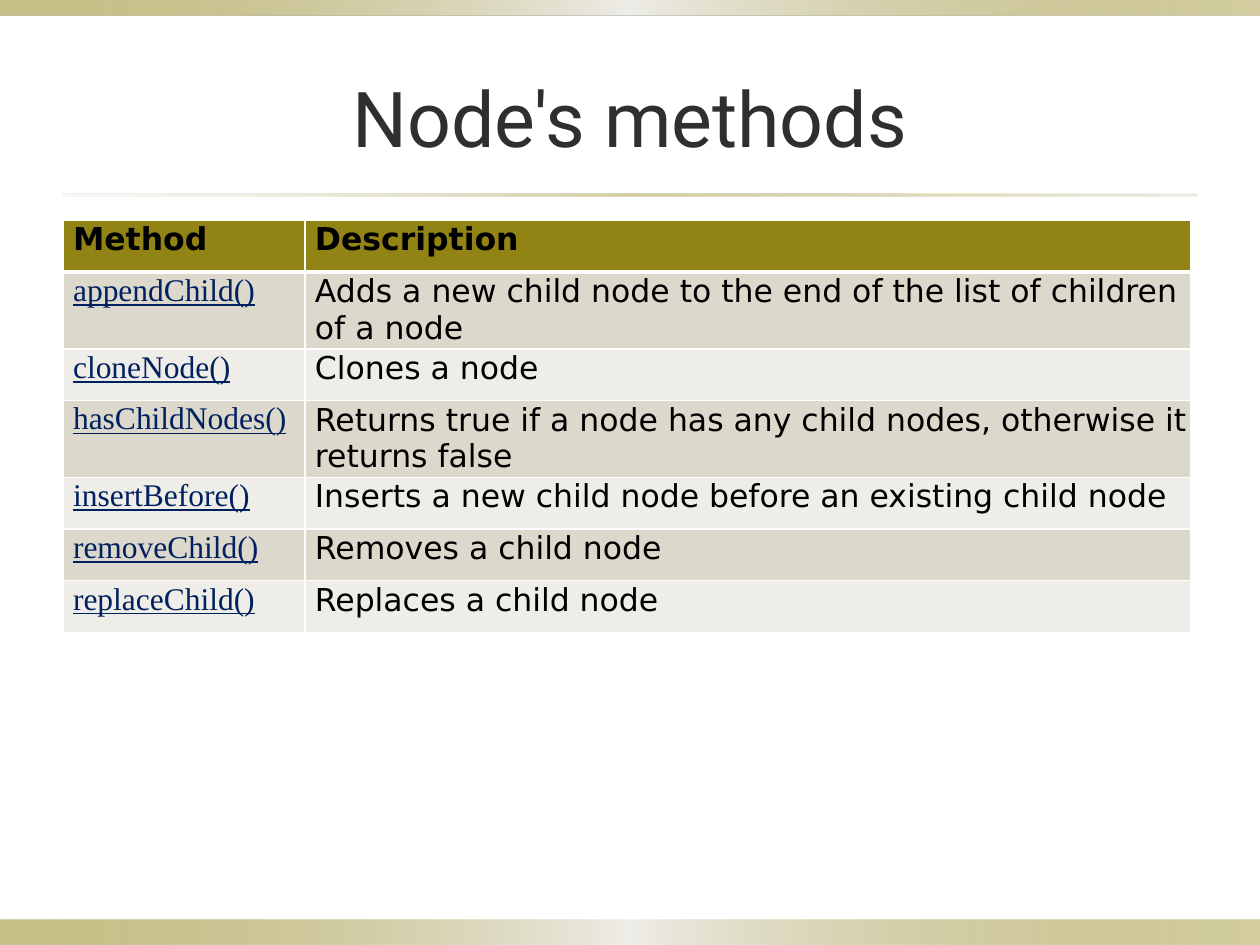
from lxml import etree
from pptx import Presentation
from pptx import util as u
from pptx.dml.color import RGBColor
from pptx.enum import shapes, text
from pptx.oxml.ns import qn

COLORS = {"olive": "918415", "band": "DCD9CC", "pale": "EEEDE8", "title": "2F2F2F",
          "link": "002060", "black": "000000", "white": "FFFFFF"}
FORMATS = {
    "title": ({"name": "Roboto", "size": u.Pt(44)}, "title"),
    "header": ({"name": "DejaVu Sans", "size": u.Pt(18), "bold": True}, "black"),
    "method": ({"name": "Times New Roman", "size": u.Pt(18), "bold": False,
                "underline": True}, "link"),
    "description": ({"name": "DejaVu Sans", "size": u.Pt(18), "bold": False}, "black"),
}
BAR = [(0, "olive", 50), (50, "pale", 100), (100, "olive", 40)]
RULE = [(0, "band", 20), (50, "olive", 40), (100, "band", 50)]
ROWS = [
    ("Method", "Description"),
    ("appendChild()", "Adds a new child node to the end of the list of children of a node"),
    ("cloneNode()", "Clones a node"),
    ("hasChildNodes()", "Returns true if a node has any child nodes, otherwise it returns false"),
    ("insertBefore()", "Inserts a new child node before an existing child node"),
    ("removeChild()", "Removes a child node"),
    ("replaceChild()", "Replaces a child node"),
]


def write(tf, words, kind):
    r = tf.paragraphs[0].add_run()
    r.text = words
    values, color = FORMATS[kind]
    for name, value in values.items():
        setattr(r.font, name, value)
    r.font.color.rgb = RGBColor.from_string(COLORS[color])


def add_color(parent, color, alpha=100):
    clr = etree.SubElement(parent, qn("a:srgbClr"), val=COLORS[color])
    if alpha < 100:
        etree.SubElement(clr, qn("a:alpha"), val=str(alpha * 1000))


prs = Presentation()
prs.slide_width, prs.slide_height = u.Inches(10), u.Inches(7.5)
s = prs.slides.add_slide(prs.slide_layouts[5])

for box, stops in [((0, 7.3, 10, 0.2), BAR), ((0, 0, 10, 0.12), BAR),
                   ((0.5, 1.54, 9, 0.02), RULE)]:
    sp = s.shapes.add_shape(shapes.MSO_SHAPE.RECTANGLE, *map(u.Inches, box))
    sp.shadow.inherit = False
    sp.line.fill.background()
    sp.fill.gradient()
    sp.fill.gradient_angle = 0
    gs_list = next(sp._element.iter(qn("a:gsLst")))
    gs_list.clear()
    for pos, color, alpha in stops:
        add_color(etree.SubElement(gs_list, qn("a:gs"), pos=str(pos * 1000)), color, alpha)

title = s.shapes.title
for name, value in {"left": 0.5, "top": 0.3, "width": 9, "height": 1.25}.items():
    setattr(title, name, u.Inches(value))
tf = title.text_frame
tf.vertical_anchor = text.MSO_ANCHOR.MIDDLE
write(tf, "Node's methods", "title")
tf.paragraphs[0].alignment = text.PP_ALIGN.CENTER

table = s.shapes.add_table(len(ROWS), 2, *map(u.Inches, (0.5, 1.75, 8.95, 3.25))).table
for column, width in zip(table.columns, (1.92, 7.03)):
    column.width = u.Inches(width)

for i, row in enumerate(ROWS):
    table.rows[i].height = u.Inches(0.61 if len(row[1]) > 60 else 0.41)
    for j, words in enumerate(row):
        cell = table.cell(i, j)
        for side, inset in {"left": 0.08, "top": 0.01, "right": 0.01, "bottom": 0}.items():
            setattr(cell, f"margin_{side}", u.Inches(inset))
        tc_pr = cell._tc.get_or_add_tcPr()
        for side in "LRTB":
            heavy = (i, side) in [(0, "B"), (1, "T")]
            ln = etree.SubElement(tc_pr, qn(f"a:ln{side}"), w=str(u.Pt(3 if heavy else 1)))
            add_color(etree.SubElement(ln, qn("a:solidFill")), "white")
        cell.fill.solid()
        fill = "olive" if i == 0 else "band" if i % 2 else "pale"
        cell.fill.fore_color.rgb = RGBColor.from_string(COLORS[fill])
        write(cell.text_frame, words, "header" if i == 0 else ("method", "description")[j])

prs.save("out.pptx")
